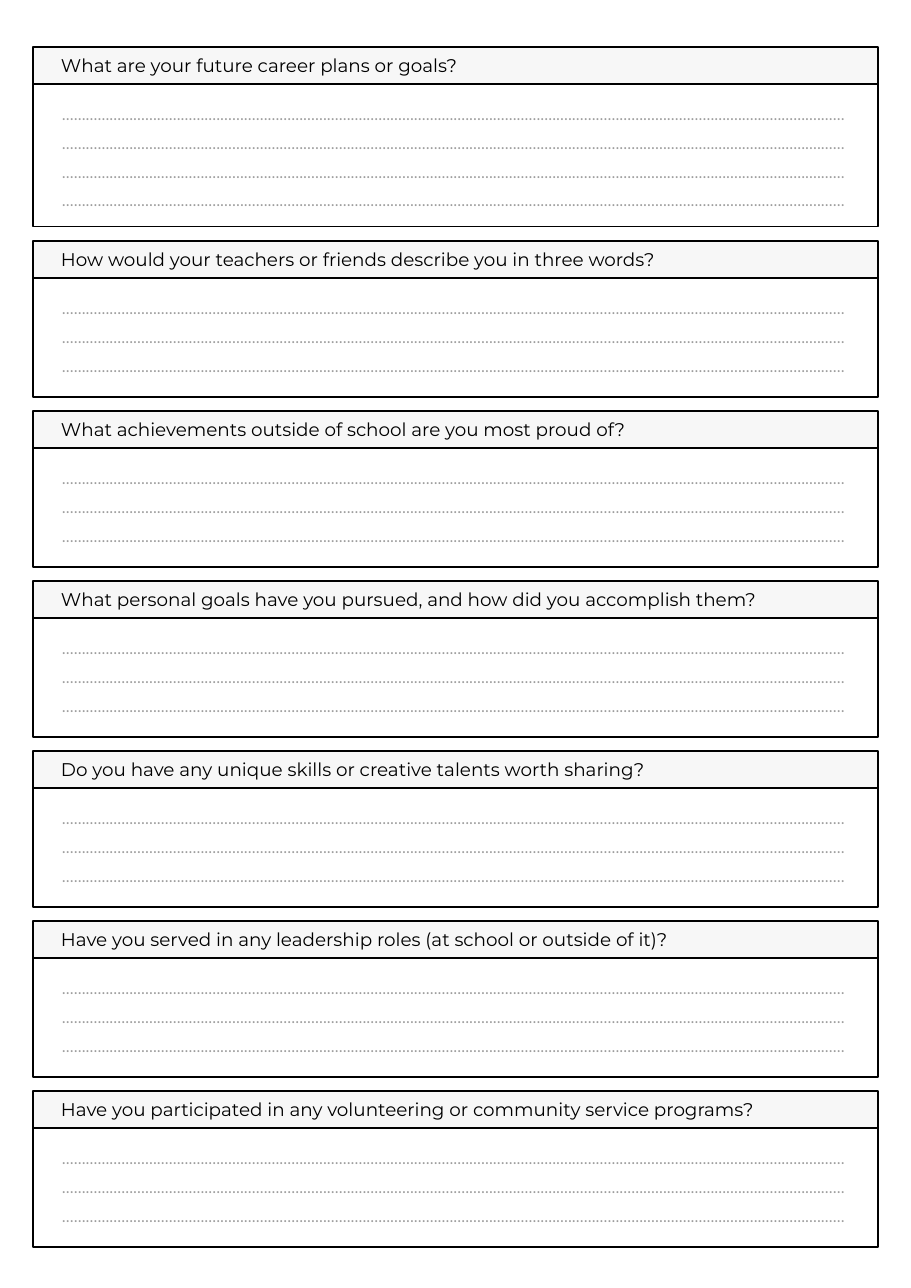
from pptx import Presentation
from pptx.dml.color import RGBColor
from pptx.enum.shapes import MSO_SHAPE as Shape
from pptx.enum.text import MSO_ANCHOR as Anchor, MSO_AUTO_SIZE as Fit, PP_ALIGN as Align
from pptx.util import Emu, Pt

SCALE = 8298  # EMU in one px
WIDTH, HEIGHT = 911, 1288
FONT = "Montserrat"
BLACK, GREY, PALE = "000000", "9E9E9E", "F7F7F7"

LEFT, TOP, WIDE = 33, 47, 845
HEAD, GAP = 37, 14
BODY = {3: 119, 4: 143}  # body height by number of answer lines
DOTS = "………………………………….……………………………….……………….…….……………….…….………………………………….…….…………….……"

# Each question with its number of answer lines
CARDS = [
    ("What are your future career plans or goals?", 4),
    ("How would your teachers or friends describe you in three words?", 3),
    ("What achievements outside of school are you most proud of?", 3),
    ("What personal goals have you pursued, and how did you accomplish them?", 3),
    ("Do you have any unique skills or creative talents worth sharing?", 3),
    ("Have you served in any leadership roles (at school or outside of it)?", 3),
    ("Have you participated in any volunteering or community service programs?", 3),
]


def px(num):
    return Emu(num * SCALE)


def color(code):
    return RGBColor.from_string(code)


def style(frame, tint, space=None):
    for para in frame.paragraphs:
        para.alignment = Align.LEFT
        if space:
            para.line_spacing = space
        for run in para.runs:
            run.font.name = FONT
            run.font.size = Pt(12)
            run.font.color.rgb = color(tint)


def inset(frame, left, rest):
    frame.margin_left = px(left)
    frame.margin_top = frame.margin_right = frame.margin_bottom = px(rest)


def add_box(shapes, top, high, fill=None):
    box = shapes.add_shape(Shape.RECTANGLE, px(LEFT), px(top), px(WIDE), px(high))
    box.shadow.inherit = False
    if fill:
        box.fill.solid()
        box.fill.fore_color.rgb = color(fill)
    else:
        box.fill.background()
    box.line.color.rgb = color(BLACK)
    box.line.width = Pt(0.75)
    return box


def add_head(shapes, top, words):
    frame = add_box(shapes, top, HEAD, PALE).text_frame
    inset(frame, 28, 11)
    frame.vertical_anchor = Anchor.MIDDLE
    frame.word_wrap = True
    frame.text = words
    style(frame, BLACK)


def add_lines(shapes, top, count):
    box = shapes.add_textbox(px(62), px(top), px(791), px(27 * count))
    frame = box.text_frame
    inset(frame, 0, 0)
    frame.word_wrap = True
    frame.auto_size = Fit.SHAPE_TO_FIT_TEXT
    frame.text = "\n".join([DOTS] * count)
    style(frame, GREY, 1.3)


def add_card(slide, top, words, count):
    shapes = slide.shapes.add_group_shape().shapes
    add_box(shapes, top + HEAD, BODY[count])
    add_head(shapes, top, words)
    add_lines(shapes, top + HEAD + 12, count)


def main():
    deck = Presentation()
    deck.slide_width, deck.slide_height = px(WIDTH), px(HEIGHT)
    slide = deck.slides.add_slide(deck.slide_layouts[6])

    # Stack the cards down the page
    top = TOP
    for words, count in CARDS:
        add_card(slide, top, words, count)
        top += HEAD + BODY[count] + GAP

    deck.save("out.pptx")


if __name__ == "__main__":
    main()
